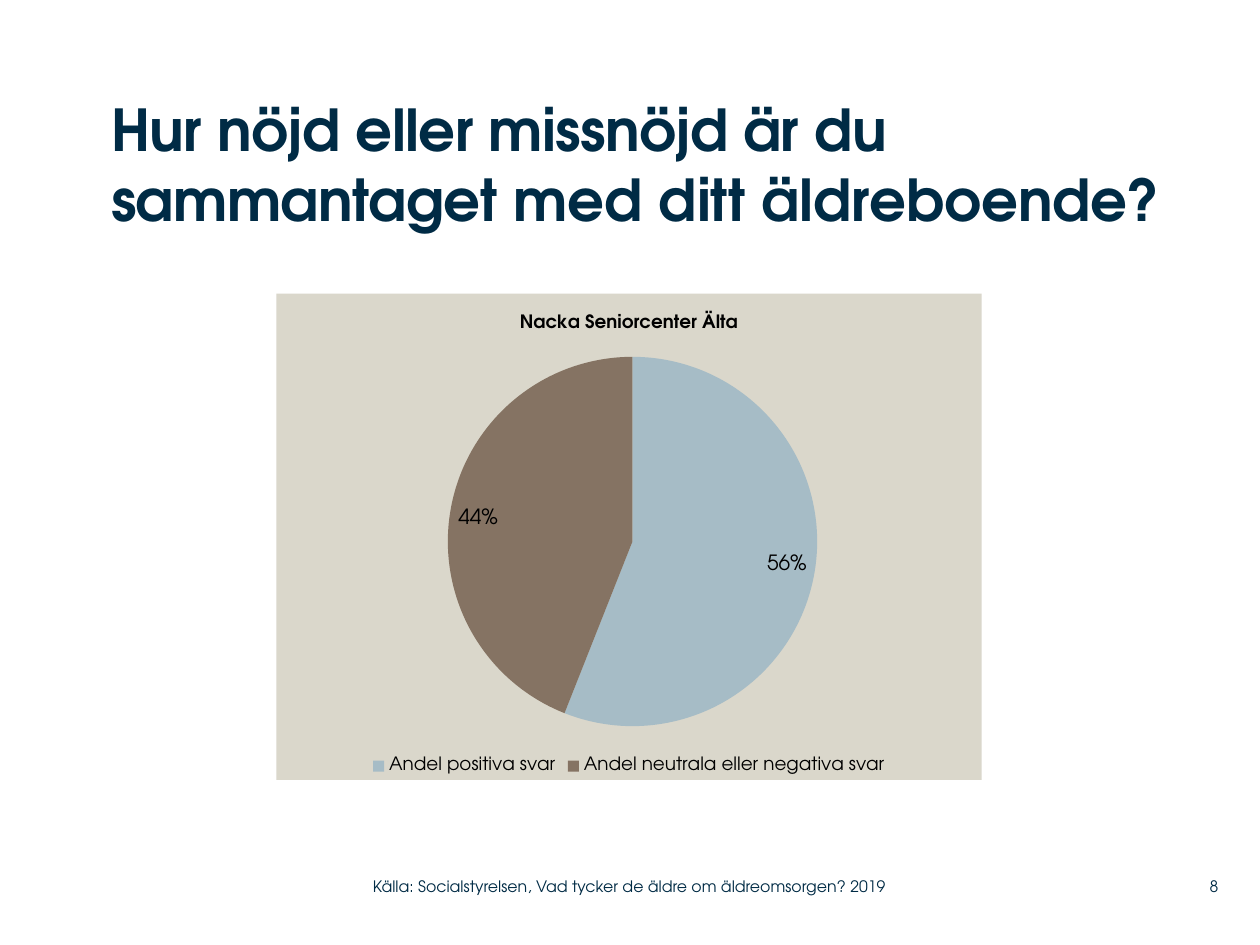
from dataclasses import dataclass

from lxml import etree
from pptx import Presentation
from pptx.chart.data import CategoryChartData
from pptx.dml.color import RGBColor
from pptx.enum import chart as charts, text
from pptx.oxml import parse_xml
from pptx.oxml.ns import nsdecls, qn
from pptx.util import Cm, Pt


@dataclass(frozen=True)
class Theme:
    font: str = "TeX Gyre Adventor"
    ink: str = "002B45"
    chart_ink: str = "000000"
    panel: str = "DAD7CB"
    heading_size: float = 33
    label_size: float = 12
    chart_size: float = 10.5
    small_size: float = 9


THEME = Theme()

# Each part of the heading: wording, letter spacing in hundredths of a point
HEADING = [
    ("Hur nöjd eller missnöjd är du sammantaget ", -30),
    ("med ditt äldreboende?", 0),
]
HEADING_BOX = (2.24, 1.9, 22.43, 3.6)

CHART_TITLE = "Nacka Seniorcenter Älta"
ANSWERS = [
    ("Andel positiva svar", 56, "A6BCC6"),
    ("Andel neutrala eller negativa svar", 44, "857363"),
]
CHART_BOX = (5.57, 5.92, 14.22, 9.8)
PIE_AREA = {"x": 0.24, "y": 0.13, "w": 0.53, "h": 0.76}

FOOTERS = [
    ("Källa: Socialstyrelsen, Vad tycker de äldre om äldreomsorgen? 2019",
     (7.52, 17.5, 11.25, 0.74), text.PP_ALIGN.LEFT),
    ("8", (23.37, 17.5, 1.19, 0.74), text.PP_ALIGN.RIGHT),
]


def style_font(font, size, color, bold=False):
    font.name = THEME.font
    font.size = Pt(size)
    font.bold = bold
    font.color.rgb = RGBColor.from_string(color)


def write(frame, parts, size, color=THEME.ink, bold=False,
          align=text.PP_ALIGN.LEFT, anchor=text.MSO_ANCHOR.TOP):
    """Fill a frame with one paragraph of (wording, letter spacing) parts."""
    frame.word_wrap = True
    frame.auto_size = text.MSO_AUTO_SIZE.NONE
    frame.vertical_anchor = anchor
    frame.margin_left = frame.margin_right = 0
    frame.margin_top = frame.margin_bottom = 0
    paragraph = frame.paragraphs[0]
    paragraph.alignment = align
    for wording, spacing in parts:
        run = paragraph.add_run()
        run.text = wording
        style_font(run.font, size, color, bold)
        if spacing:
            run.font._element.set("spc", str(spacing))


def add_heading(slide):
    heading = slide.shapes.title
    heading.left, heading.top, heading.width, heading.height = map(Cm, HEADING_BOX)
    write(heading.text_frame, HEADING, THEME.heading_size, bold=True)


def paint_panel(chart):
    """Give the whole chart area a plain fill without a border."""
    panel = parse_xml(
        f'<c:spPr {nsdecls("c", "a")}><a:solidFill><a:srgbClr val="{THEME.panel}"/>'
        "</a:solidFill><a:ln><a:noFill/></a:ln></c:spPr>")
    chart._chartSpace.find(qn("c:chart")).addnext(panel)


def place_pie(chart):
    """Fix the pie's area as fractions of the chart."""
    plot_area = chart._chartSpace.find(qn("c:chart")).find(qn("c:plotArea"))
    layout = plot_area.find(qn("c:layout"))
    if layout is None:
        layout = etree.Element(qn("c:layout"))
        plot_area.insert(0, layout)
    manual = etree.SubElement(layout, qn("c:manualLayout"))
    settings = {"layoutTarget": "inner", "xMode": "edge", "yMode": "edge", **PIE_AREA}
    for tag, value in settings.items():
        etree.SubElement(manual, qn(f"c:{tag}")).set("val", str(value))


def add_answers(slide):
    answers = CategoryChartData()
    answers.categories = [name for name, _, _ in ANSWERS]
    answers.add_series("Series 1", [share for _, share, _ in ANSWERS])
    chart = slide.shapes.add_chart(
        charts.XL_CHART_TYPE.PIE, *map(Cm, CHART_BOX), answers).chart
    style_font(chart.font, 18, THEME.chart_ink)
    paint_panel(chart)
    place_pie(chart)

    chart.has_title = True
    title = chart.chart_title
    title.include_in_layout = False
    title.text_frame.text = CHART_TITLE
    style_font(title.text_frame.paragraphs[0].runs[0].font,
               THEME.chart_size, THEME.chart_ink, bold=True)

    chart.has_legend = True
    chart.legend.position = charts.XL_LEGEND_POSITION.BOTTOM
    chart.legend.include_in_layout = False
    style_font(chart.legend.font, THEME.chart_size, THEME.chart_ink)

    pie = chart.plots[0]
    pie.vary_by_categories = True
    for index, (_, _, color) in enumerate(ANSWERS):
        slice_format = pie.series[0].points[index].format
        slice_format.fill.solid()
        slice_format.fill.fore_color.rgb = RGBColor.from_string(color)
        slice_format.line.fill.background()

    labels = pie.series[0].data_labels
    labels.show_value = False
    labels.show_percentage = True
    labels.number_format = "0%"
    labels.number_format_is_linked = False
    labels.position = charts.XL_LABEL_POSITION.INSIDE_END
    style_font(labels.font, THEME.label_size, THEME.chart_ink)


def main():
    deck = Presentation()
    deck.slide_width, deck.slide_height = Cm(25.4), Cm(19.05)
    slide = deck.slides.add_slide(deck.slide_layouts.get_by_name("Title Only"))
    add_heading(slide)
    add_answers(slide)
    for wording, box, align in FOOTERS:
        footer = slide.shapes.add_textbox(*map(Cm, box))
        write(footer.text_frame, [(wording, 0)], THEME.small_size,
              align=align, anchor=text.MSO_ANCHOR.MIDDLE)
    deck.save("out.pptx")


if __name__ == "__main__":
    main()
